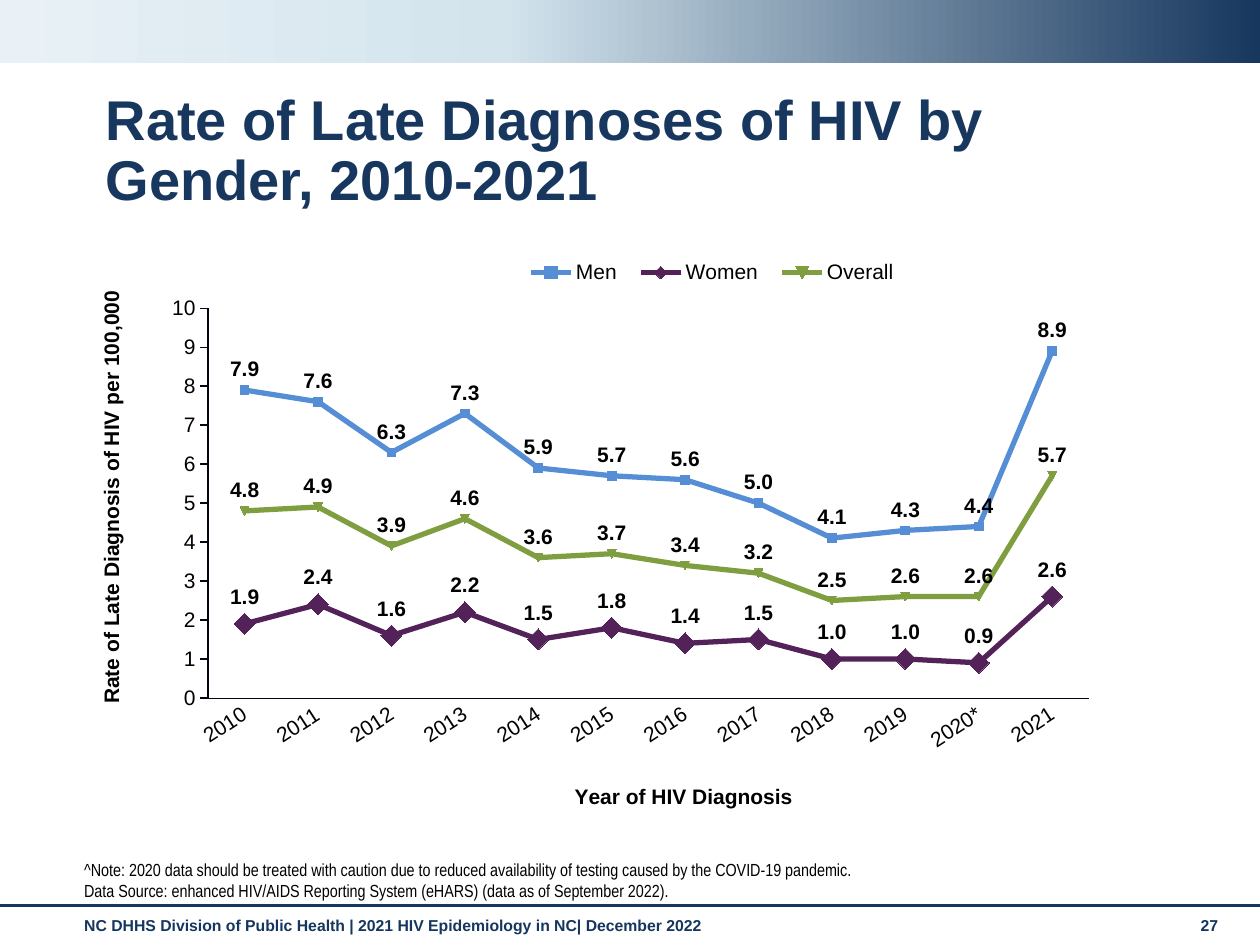
"""Build the slide on late HIV diagnoses by gender."""
from dataclasses import dataclass
from typing import Optional

from lxml import etree
from pptx import Presentation
from pptx import util as u
from pptx.chart import data as chart_data
from pptx.dml.color import RGBColor
from pptx.enum import chart as ch, shapes, text
from pptx.oxml import ns

PX = 9144
NAVY, BLACK, AXIS = "17375E", "000000", "000514"
YEARS = [str(year) for year in range(2010, 2020)] + ["2020*", "2021"]


@dataclass
class Label:
    """A text box with one run style."""
    area: tuple[int, int, int, int]
    lines: list[str]
    size: int
    color: str
    bold: bool = True
    font: str = "Arial"
    anchor: text.MSO_ANCHOR = text.MSO_ANCHOR.TOP
    spacing: Optional[float] = None


@dataclass
class Trend:
    """One line of the chart."""
    name: str
    values: list[float]
    color: str
    marker: ch.XL_MARKER_STYLE
    marker_size: int


LABELS = [
    Label((57, 722, 874, 29),
          ["NC DHHS Division of Public Health | 2021 HIV Epidemiology in NC| December 2022"],
          9, "15365E"),
    Label((943, 722, 44, 30), ["27"], 9, "15365E"),
    Label((74, 68, 858, 60), ["Rate of Late Diagnoses of HIV by Gender, 2010-2021"],
          32, NAVY, spacing=0.9),
    Label((57, 684, 874, 36),
          ["^Note: 2020 data should be treated with caution due to reduced availability "
           "of testing caused by the COVID-19 pandemic.",
           "Data Source: enhanced HIV/AIDS Reporting System (eHARS) (data as of September 2022)."],
          10, BLACK, bold=False, font="Arial Narrow", anchor=text.MSO_ANCHOR.BOTTOM),
]
TRENDS = [
    Trend("Men", [7.9, 7.6, 6.3, 7.3, 5.9, 5.7, 5.6, 5, 4.1, 4.3, 4.4, 8.9],
          "558ED5", ch.XL_MARKER_STYLE.SQUARE, 5),
    Trend("Women", [1.9, 2.4, 1.6, 2.2, 1.5, 1.8, 1.4, 1.5, 1, 1, 0.9, 2.6],
          "522258", ch.XL_MARKER_STYLE.DIAMOND, 12),
    Trend("Overall", [4.8, 4.9, 3.9, 4.6, 3.6, 3.7, 3.4, 3.2, 2.5, 2.6, 2.6, 5.7],
          "7F9E3F", ch.XL_MARKER_STYLE.AUTOMATIC, 5),
]


def emu(*lengths: int) -> list[int]:
    """Turn px into EMU."""
    return [length * PX for length in lengths]


def paint(target, color: str) -> None:
    """Give a fill or a font a solid colour."""
    if hasattr(target, "solid"):
        target.solid()
        target = target.fore_color
    else:
        target = target.color
    target.rgb = RGBColor.from_string(color)


def style_font(font, size: int, color: str, bold: bool, name: str = "Arial") -> None:
    """Set the face, size, weight and colour of a font."""
    font.name, font.size, font.bold = name, u.Pt(size), bold
    paint(font, color)


def style_line(line, color: str, width: float) -> None:
    """Set the colour and width of a line."""
    paint(line.fill, color)
    line.width = u.Pt(width)


def child(parent, tag: str, **attributes: str):
    """Append an XML element."""
    return etree.SubElement(parent, ns.qn(tag), attributes)


def add_label(page, label: Label) -> None:
    """Draw a text box."""
    box = page.shapes.add_textbox(*emu(*label.area))
    frame = box.text_frame
    frame.word_wrap = True
    frame.vertical_anchor = label.anchor
    for index, line in enumerate(label.lines):
        para = frame.add_paragraph() if index else frame.paragraphs[0]
        para.line_spacing = label.spacing
        span = para.add_run()
        span.text = line
        style_font(span.font, label.size, label.color, label.bold, label.font)


def add_banner(page) -> None:
    """Draw the gradient band at the top."""
    banner = page.shapes.add_shape(shapes.MSO_SHAPE.RECTANGLE, *emu(0, 0, 1000, 50))
    banner.shadow.inherit = False
    banner.line.fill.background()
    banner.fill.gradient()
    banner.fill.gradient_angle = 180
    stops = banner.element.spPr.find(".//" + ns.qn("a:gsLst"))
    for stop in list(stops):
        stops.remove(stop)
    for percent, color in ((0, NAVY), (60, "D3E4ED"), (100, "E9F1F6")):
        stop = child(stops, "a:gs", pos=str(percent * 1000))
        child(stop, "a:srgbClr", val=color)


def add_rule(page) -> None:
    """Draw the line above the footer."""
    rule = page.shapes.add_connector(shapes.MSO_CONNECTOR.STRAIGHT, *emu(0, 719, 1000, 719))
    style_line(rule.line, NAVY, 1.75)
    child(rule.element.spPr, "a:effectLst")


def place(part, position: int, inner: bool = False, **fractions: float) -> None:
    """Fix where a chart part sits, as fractions of the chart."""
    for old in part.findall(ns.qn("c:layout")):
        part.remove(old)
    layout = etree.Element(ns.qn("c:layout"))
    manual = child(layout, "c:manualLayout")
    if inner:
        child(manual, "c:layoutTarget", val="inner")
    for mode in ("c:xMode", "c:yMode"):
        child(manual, mode, val="edge")
    for key, value in fractions.items():
        child(manual, "c:" + key, val=str(value))
    part.insert(position, layout)


def style_axis(axis, title: str, width: float, tick, x: float, y: float) -> None:
    """Style an axis and set its title."""
    axis.has_major_gridlines = False
    axis.major_tick_mark, axis.minor_tick_mark = tick, ch.XL_TICK_MARK.NONE
    style_line(axis.format.line, AXIS, width)
    style_font(axis.tick_labels.font, 12, BLACK, False)
    span = axis.axis_title.text_frame.paragraphs[0].add_run()
    span.text = title
    style_font(span.font, 12, BLACK, True)
    place(axis.axis_title._element, 1, x=x, y=y)


def style_trend(series, trend: Trend) -> None:
    """Style a line with its markers and labels."""
    series.smooth = False
    style_line(series.format.line, trend.color, 3)
    series.marker.style, series.marker.size = trend.marker, trend.marker_size
    paint(series.marker.format.fill, trend.color)
    series.marker.format.line.fill.background()
    labels = series.data_labels
    labels.show_value = True
    labels.position = ch.XL_LABEL_POSITION.ABOVE
    labels.number_format, labels.number_format_is_linked = "0.0", False
    style_font(labels.font, 12, BLACK, True)


def add_rates(page) -> None:
    """Draw the line chart."""
    rates = chart_data.CategoryChartData()
    rates.categories = YEARS
    for trend in TRENDS:
        rates.add_series(trend.name, trend.values)
    chart = page.shapes.add_chart(ch.XL_CHART_TYPE.LINE_MARKERS, *emu(57, 196, 900, 455), rates).chart
    chart.has_title = False
    style_font(chart.font, 12, BLACK, True)
    chart.plots[0].vary_by_categories = False
    for series, trend in zip(chart.plots[0].series, TRENDS):
        style_trend(series, trend)
    years, scale = chart.category_axis, chart.value_axis
    style_axis(years, "Year of HIV Diagnosis", 0.27, ch.XL_TICK_MARK.NONE, 0.44, 0.93)
    style_axis(scale, "Rate of Late Diagnosis of HIV per 100,000", 0.75,
               ch.XL_TICK_MARK.OUTSIDE, 0.02, 0.07)
    years._element.find(ns.qn("c:txPr")).find(ns.qn("a:bodyPr")).set("rot", "-1980000")
    scale.minimum_scale, scale.maximum_scale, scale.major_unit = 0, 10, 1
    scale.tick_labels.number_format = "#,##0"
    scale.tick_labels.number_format_is_linked = False
    chart.has_legend = True
    chart.legend.position = ch.XL_LEGEND_POSITION.TOP
    chart.legend.include_in_layout = False
    style_font(chart.legend.font, 12, BLACK, False)
    place(chart.legend._element, 1, x=0.39, y=0.01, w=0.35, h=0.07)
    plot_area = chart._chartSpace.find(".//" + ns.qn("c:plotArea"))
    place(plot_area, 0, inner=True, x=0.12, y=0.107, w=0.777, h=0.68)


def main() -> None:
    """Build and save the deck."""
    deck = Presentation()
    deck.slide_width, deck.slide_height = emu(1000, 750)
    page = deck.slides.add_slide(deck.slide_layouts[6])
    add_banner(page)
    add_rule(page)
    add_rates(page)
    for label in LABELS:
        add_label(page, label)
    deck.save("out.pptx")


if __name__ == "__main__":
    main()
